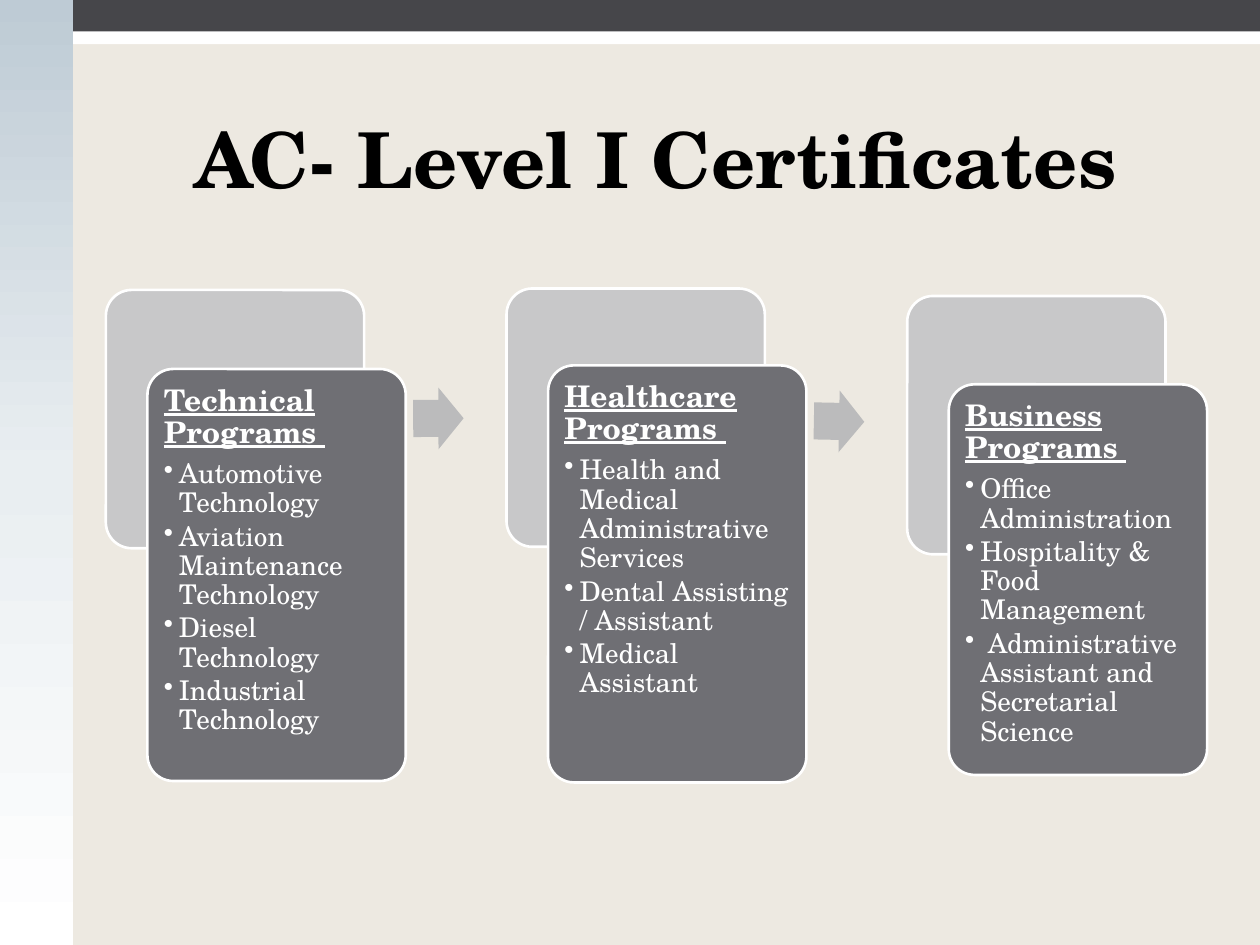
from copy import deepcopy
from dataclasses import dataclass
from math import atan2, degrees

from lxml import etree
from pptx import Presentation
from pptx.dml.color import RGBColor
from pptx.enum.shapes import MSO_SHAPE
from pptx.enum.text import MSO_ANCHOR, PP_ALIGN
from pptx.oxml.ns import qn
from pptx.util import Inches, Pt

RECTANGLE = MSO_SHAPE.RECTANGLE
ROUNDED = MSO_SHAPE.ROUNDED_RECTANGLE
ARROW = MSO_SHAPE.RIGHT_ARROW
TOP, BOTTOM = MSO_ANCHOR.TOP, MSO_ANCHOR.BOTTOM
LEFT, CENTER = PP_ALIGN.LEFT, PP_ALIGN.CENTER

# The grid has 100 columns and 75 rows, each cell a tenth of an inch square.
COLUMNS, ROWS = 100, 75
CELL = Inches(0.1)

SIDEBAR = 5.8
FIRST_COLUMN, COLUMN_PITCH = 8.4, 31.8
CARD_WIDTH, CARD_SHIFT = 20.5, 3.3
OVERLAP = 0.435  # share of the front card that lies over the back card
CENTER_ROW = 42.5
ARROW_SHIFT, ARROW_WIDTH, ARROW_HEIGHT = 24.4, 4, 4.9

# Heading, height of the front card in rows, programs
CARDS = [
    ("Technical Programs ", 32.7, [
        "Automotive Technology", "Aviation Maintenance Technology",
        "Diesel Technology", "Industrial Technology"]),
    ("Healthcare Programs ", 33.1, [
        "Health and Medical Administrative Services",
        "Dental Assisting / Assistant", "Medical Assistant"]),
    ("Business Programs ", 31, [
        "Office Administration", "Hospitality & Food Management",
        " Administrative Assistant and Secretarial Science"]),
]


@dataclass(frozen=True)
class Theme:
    font: str = "TeX Gyre Schola"
    background: str = "EDE9E1"
    sidebar: tuple = ("BECBD5", "E9EEF1", "FFFFFF")
    top_bar: str = "46464A"
    back_card: str = "C8C8C9"
    front_card: str = "6F6F74"
    arrow: str = "BBBBBC"
    light: str = "FFFFFF"
    dark: str = "000000"
    title_size: float = 44
    heading_size: float = 17
    item_size: float = 15.5
    outline: float = 1.5


class SlideBuilder:
    def __init__(self, slide, theme):
        self.slide = slide
        self.theme = theme
        fill = slide.background.fill
        fill.solid()
        fill.fore_color.rgb = RGBColor.from_string(theme.background)

    def block(self, kind, column, row, width, height, color, outlined=False):
        cells = (column, row, width, height)
        shape = self.slide.shapes.add_shape(kind, *(int(n * CELL) for n in cells))
        shape.shadow.inherit = False
        shape.fill.solid()
        shape.fill.fore_color.rgb = RGBColor.from_string(color)
        if outlined:
            shape.line.color.rgb = RGBColor.from_string(self.theme.light)
            shape.line.width = Pt(self.theme.outline)
        else:
            shape.line.fill.background()
        return shape

    def gradient_block(self, column, row, width, height, colors):
        """Add a rectangle shaded from top to bottom through three colors."""
        shape = self.block(RECTANGLE, column, row, width, height, colors[0])
        shape.fill.gradient()
        shape.fill.gradient_angle = 270
        stops = shape._element.spPr.find(".//" + qn("a:gsLst"))
        stops.insert(1, deepcopy(stops[0]))
        for stop, color, position in zip(shape.fill.gradient_stops, colors, (0, 0.5, 1)):
            stop.color.rgb = RGBColor.from_string(color)
            stop.position = position

    def style(self, paragraph, size, color, bold=False, underline=False):
        for run in paragraph.runs:
            font = run.font
            font.name, font.size = self.theme.font, Pt(size)
            font.bold, font.underline = bold, underline
            font.color.rgb = RGBColor.from_string(color)

    def title(self, text, column, row, width, height):
        cells = (column, row, width, height)
        box = self.slide.shapes.add_textbox(*(int(n * CELL) for n in cells))
        frame = box.text_frame
        frame.word_wrap = True
        frame.vertical_anchor = BOTTOM
        frame.text = text
        paragraph = frame.paragraphs[0]
        paragraph.alignment = CENTER
        self.style(paragraph, self.theme.title_size, self.theme.dark, bold=True)

    def card(self, column, row, height, heading, items):
        theme = self.theme
        shape = self.block(ROUNDED, column, row, CARD_WIDTH, height,
                           theme.front_card, outlined=True)
        shape.adjustments[0] = 0.1
        frame = shape.text_frame
        frame.word_wrap = True
        frame.vertical_anchor = TOP
        frame.margin_left = frame.margin_right = Inches(0.07)
        frame.margin_top = frame.margin_bottom = Inches(0.07)
        frame.text = "\n".join([heading, *items])
        for index, paragraph in enumerate(frame.paragraphs):
            paragraph.alignment = LEFT
            paragraph.line_spacing = 0.9
            if index == 0:
                paragraph.space_after = Pt(0.35 * theme.heading_size)
                self.style(paragraph, theme.heading_size, theme.light, True, True)
            else:
                paragraph.space_after = Pt(0.15 * theme.item_size)
                self.style(paragraph, theme.item_size, theme.light)
                self.bullet(paragraph)

    def bullet(self, paragraph):
        paragraph.level = 1
        properties = paragraph._p.get_or_add_pPr()
        properties.set("marL", str(Inches(0.12)))
        properties.set("indent", str(-Inches(0.12)))
        etree.SubElement(properties, qn("a:buChar")).set("char", "•")

    def back_card(self, column, row):
        shape = self.block(ROUNDED, column, row, CARD_WIDTH, CARD_WIDTH,
                           self.theme.back_card, outlined=True)
        shape.adjustments[0] = 0.1

    def arrow(self, column, row, next_row):
        """Add an arrow between two back cards, tilted towards the second."""
        top = (row + next_row + CARD_WIDTH - ARROW_HEIGHT) / 2
        shape = self.block(ARROW, column + ARROW_SHIFT, top,
                           ARROW_WIDTH, ARROW_HEIGHT, self.theme.arrow)
        shape.adjustments[0], shape.adjustments[1] = 0.6, 0.5
        shape.rotation = round(degrees(atan2(next_row - row, COLUMN_PITCH)), 1)


def main():
    presentation = Presentation()
    presentation.slide_width = COLUMNS * CELL
    presentation.slide_height = ROWS * CELL
    theme = Theme()
    slide = presentation.slides.add_slide(presentation.slide_layouts[6])
    builder = SlideBuilder(slide, theme)

    builder.block(RECTANGLE, 0, 0, COLUMNS, 3.5, theme.light)
    builder.gradient_block(0, 0, SIDEBAR, ROWS, theme.sidebar)
    builder.block(RECTANGLE, SIDEBAR, 0, COLUMNS - SIDEBAR, 2.5, theme.top_bar)
    builder.title(" AC- Level I Certificates ", 8.3, 4.2, 87.5, 12.5)

    # Each pair of cards is centered on the same row.
    tops = [CENTER_ROW - (CARD_WIDTH + (1 - OVERLAP) * height) / 2
            for _, height, _ in CARDS]
    for index, (heading, height, items) in enumerate(CARDS):
        column = FIRST_COLUMN + index * COLUMN_PITCH
        row = tops[index]
        builder.back_card(column, row)
        builder.card(column + CARD_SHIFT, row + CARD_WIDTH - OVERLAP * height,
                     height, heading, items)
        if index + 1 < len(CARDS):
            builder.arrow(column, row, tops[index + 1])

    presentation.save("out.pptx")


if __name__ == "__main__":
    main()
